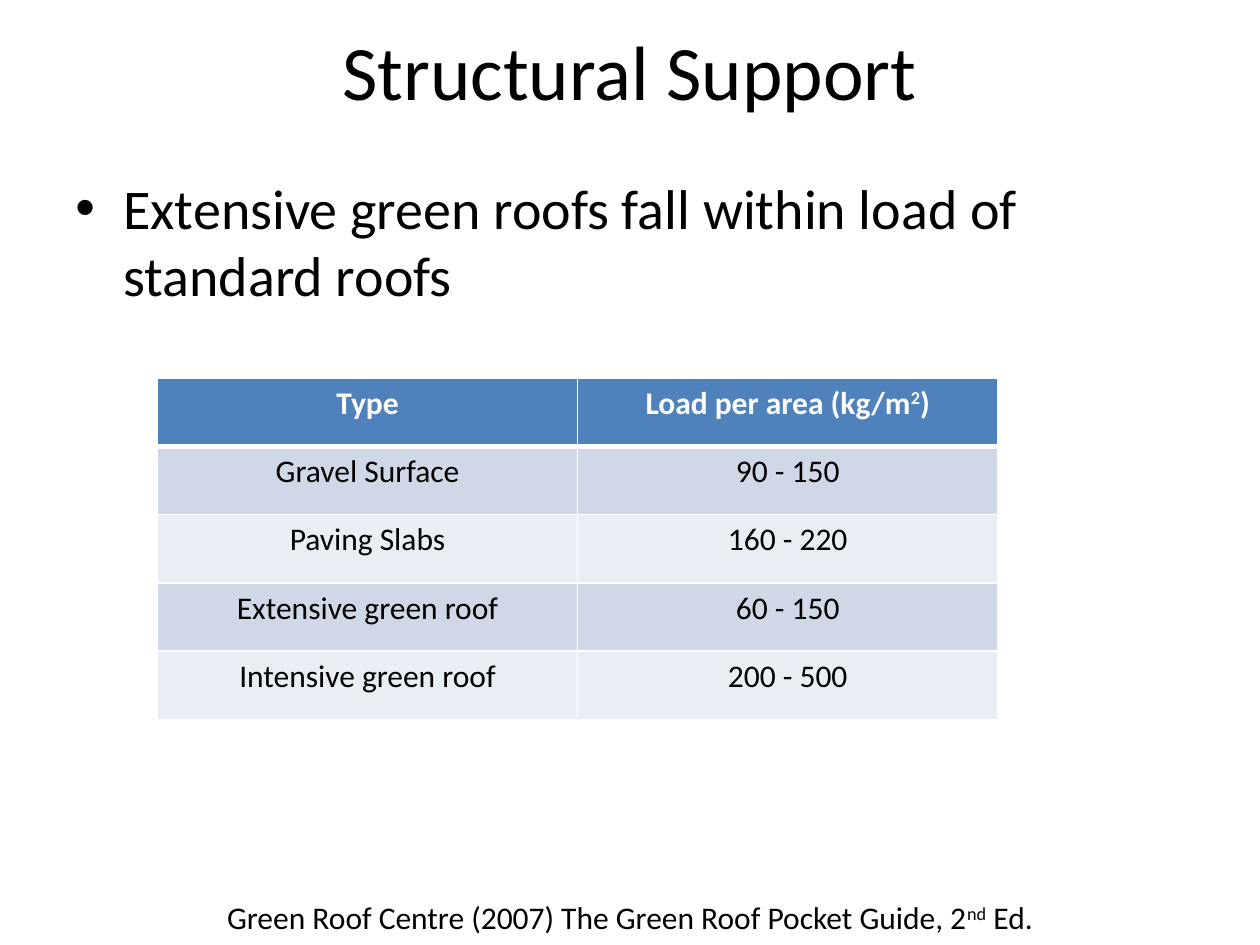
from dataclasses import dataclass

from lxml.etree import SubElement
from pptx import Presentation
from pptx.dml.color import RGBColor
from pptx.enum.text import MSO_ANCHOR, PP_ALIGN
from pptx.oxml import parse_xml
from pptx.oxml.ns import nsdecls, qn
from pptx.util import Inches, Pt

# Content: "^" separates normal text from superscript text
TITLE = "Structural Support"
BULLET = "Extensive green roofs fall within load of standard roofs"
LOADS = [
    ("Type", "Load per area (kg/m^2^)"),
    ("Gravel Surface", "90 - 150"),
    ("Paving Slabs", "160 - 220"),
    ("Extensive green roof", "60 - 150"),
    ("Intensive green roof", "200 - 500"),
]
CITATION = "Green Roof Centre (2007) The Green Roof Pocket Guide, 2^nd^ Ed."


@dataclass(frozen=True)
class Theme:
    font: str = "Calibri"
    text: str = "000000"
    light: str = "FFFFFF"
    header: str = "4F81BD"
    bands: tuple = ("D0D8E8", "E9EDF4")
    title_size: int = 44
    body_size: int = 32
    small_size: int = 18
    thin_rule: int = 1
    thick_rule: int = 3


THEME = Theme()


def write(paragraph, text, size, color=THEME.text, bold=False, align=PP_ALIGN.CENTER):
    paragraph.alignment = align
    for number, part in enumerate(text.split("^")):
        if not part:
            continue
        span = paragraph.add_run()
        span.text = part
        span.font.name = THEME.font
        span.font.size = Pt(size)
        span.font.bold = bold
        span.font.color.rgb = RGBColor.from_string(color)
        if number % 2:
            span.font._element.set("baseline", "30000")


def add_box(page, left, top, width, height, anchor=MSO_ANCHOR.TOP):
    box = page.shapes.add_textbox(*map(Inches, (left, top, width, height)))
    box.text_frame.word_wrap = True
    box.text_frame.vertical_anchor = anchor
    return box.text_frame.paragraphs[0]


def add_bullet(paragraph, indent):
    properties = paragraph._p.get_or_add_pPr()
    properties.set("marL", str(Inches(indent)))
    properties.set("indent", str(-Inches(indent)))
    SubElement(properties, qn("a:buFont"), typeface="Arial")
    SubElement(properties, qn("a:buChar"), char="•")


def set_borders(cell, **widths):
    properties = cell._tc.get_or_add_tcPr()
    for position, side in enumerate("LRTB"):
        width = Pt(widths.get(side, THEME.thin_rule))
        properties.insert(position, parse_xml(
            f'<a:ln{side} {nsdecls("a")} w="{width}"><a:solidFill>'
            f'<a:srgbClr val="{THEME.light}"/></a:solidFill></a:ln{side}>'))


def add_load_table(page, left, top, width, height):
    frame = page.shapes.add_table(
        len(LOADS), len(LOADS[0]), *map(Inches, (left, top, width, height)))
    for row, values in enumerate(LOADS):
        is_header = row == 0
        fill = THEME.header if is_header else THEME.bands[(row - 1) % 2]
        # The thick rule lies between the header and the first row
        rules = {0: {"B": THEME.thick_rule}, 1: {"T": THEME.thick_rule}}.get(row, {})
        for column, value in enumerate(values):
            cell = frame.table.cell(row, column)
            cell.fill.solid()
            cell.fill.fore_color.rgb = RGBColor.from_string(fill)
            set_borders(cell, **rules)
            write(cell.text_frame.paragraphs[0], value, THEME.small_size,
                  THEME.light if is_header else THEME.text, is_header)


def main():
    deck = Presentation()
    deck.slide_width, deck.slide_height = Inches(10), Inches(7.5)
    page = deck.slides.add_slide(deck.slide_layouts[6])

    # Title
    write(add_box(page, 0.5, 0.02, 9, 1.07, MSO_ANCHOR.MIDDLE), TITLE, THEME.title_size)

    # Key point
    point = add_box(page, 0.5, 1.33, 9, 5.37)
    add_bullet(point, 0.38)
    write(point, BULLET, THEME.body_size, align=PP_ALIGN.LEFT)

    # Roof loads
    add_load_table(page, 1.25, 3, 6.67, 2.71)

    # Citation
    write(add_box(page, 0, 7.08, 10, 0.4), CITATION, THEME.small_size)

    deck.save("out.pptx")


if __name__ == "__main__":
    main()
